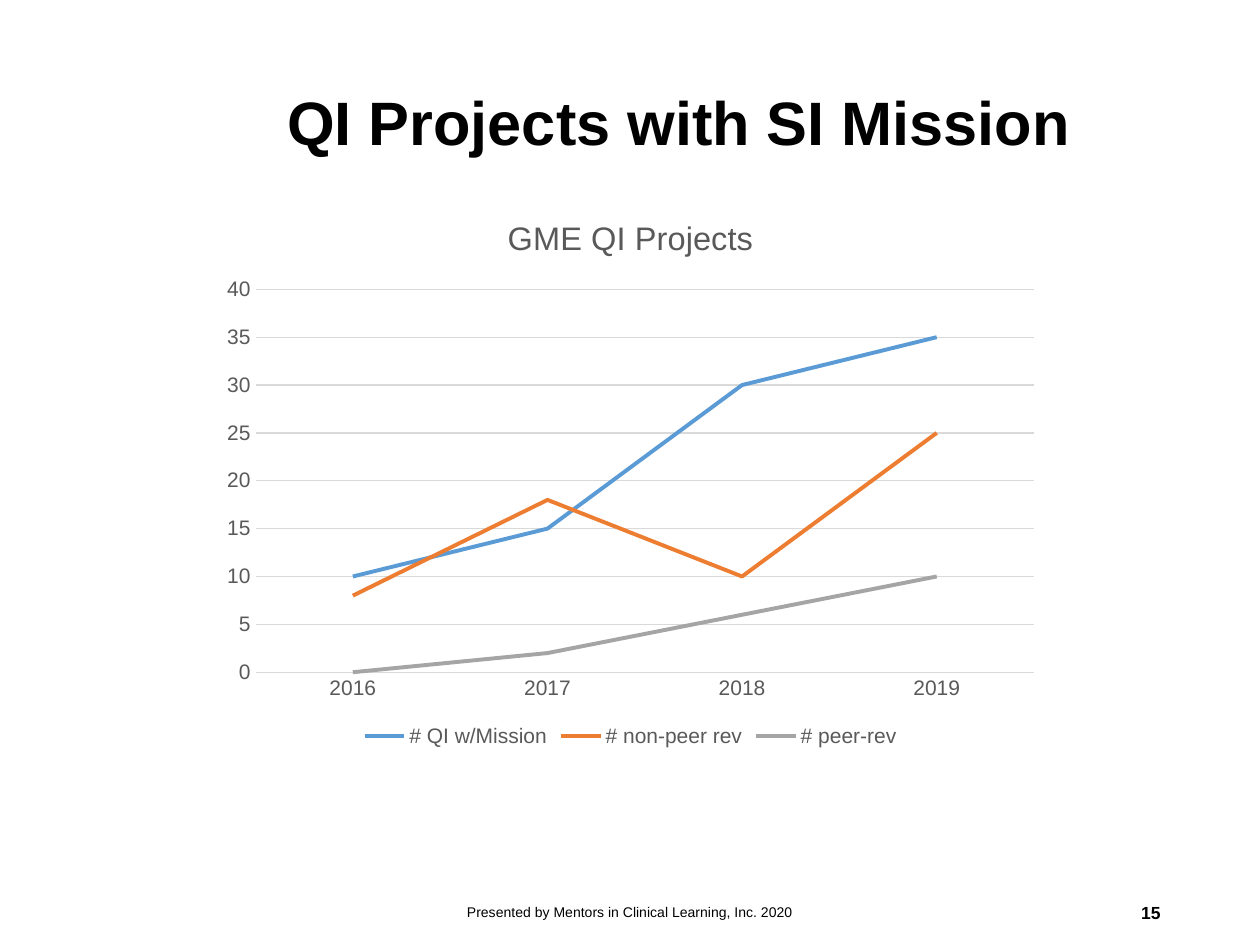
from pptx import Presentation
from pptx.chart.data import CategoryChartData
from pptx.dml.color import RGBColor
from pptx.enum.chart import XL_CHART_TYPE, XL_LEGEND_POSITION, XL_MARKER_STYLE, XL_TICK_MARK
from pptx.enum.text import MSO_ANCHOR, MSO_AUTO_SIZE, PP_ALIGN
from pptx.util import Inches, Pt

TITLE = "QI Projects with SI Mission"
CHART_TITLE = "GME QI Projects"
YEARS = ["2016", "2017", "2018", "2019"]
SERIES = [
    ("# QI w/Mission", [10, 15, 30, 35], "5B9BD5"),
    ("# non-peer rev", [8, 18, 10, 25], "ED7D31"),
    ("# peer-rev", [0, 2, 6, 10], "A5A5A5"),
]
FOOTERS = [  # text, left, width, size, bold, alignment
    ("Presented by Mentors in Clinical Learning, Inc. 2020", 3.31, 3.38, 8, False, PP_ALIGN.CENTER),
    ("15", 7.06, 2.25, 10, True, PP_ALIGN.RIGHT),
]
BLACK, GRAY, PALE = "000000", "595959", "D9D9D9"


def color(code):
    return RGBColor.from_string(code)


def style(font, size, code, bold=False):
    font.name, font.size, font.bold = "Arial", Pt(size), bold
    font.color.rgb = color(code)


def draw(line, code, width):
    line.color.rgb = color(code)
    line.width = Pt(width)


def place(shape, left, top, width, height):
    shape.left, shape.top = Inches(left), Inches(top)
    shape.width, shape.height = Inches(width), Inches(height)


def write(shape, text, size, bold, align, inset):
    frame = shape.text_frame
    frame.word_wrap = True
    frame.auto_size = MSO_AUTO_SIZE.NONE
    frame.vertical_anchor = MSO_ANCHOR.MIDDLE
    frame.margin_left = frame.margin_right = Inches(0.1)
    frame.margin_top = frame.margin_bottom = Inches(inset)
    frame.text = text
    para = frame.paragraphs[0]
    para.alignment = align
    style(para.font, size, BLACK, bold)
    return para


def add_chart(slide):
    data = CategoryChartData()
    data.categories = YEARS
    for name, values, _ in SERIES:
        data.add_series(name, values)
    box = [Inches(n) for n in (1.67, 1.53, 6.67, 4.44)]
    chart = slide.shapes.add_chart(XL_CHART_TYPE.LINE, *box, data).chart
    style(chart.font, 12, GRAY)

    chart.has_title = True
    chart.chart_title.include_in_layout = False
    frame = chart.chart_title.text_frame
    frame.text = CHART_TITLE
    style(frame.paragraphs[0].font, 18.6, GRAY)

    chart.has_legend = True
    chart.legend.position = XL_LEGEND_POSITION.BOTTOM
    chart.legend.include_in_layout = False
    style(chart.legend.font, 12, GRAY)

    for axis in (chart.category_axis, chart.value_axis):
        axis.major_tick_mark = axis.minor_tick_mark = XL_TICK_MARK.NONE
        style(axis.tick_labels.font, 12, GRAY)
    draw(chart.category_axis.format.line, PALE, 0.75)
    scale = chart.value_axis
    scale.minimum_scale, scale.maximum_scale, scale.major_unit = 0, 40, 5
    scale.format.line.fill.background()
    draw(scale.major_gridlines.format.line, PALE, 0.75)

    plot = chart.plots[0]
    plot.vary_by_categories = False
    for series, (_, _, code) in zip(plot.series, SERIES):
        series.smooth = False
        series.marker.style = XL_MARKER_STYLE.NONE
        draw(series.format.line, code, 2.25)


def main():
    deck = Presentation()
    deck.slide_width, deck.slide_height = Inches(10), Inches(7.5)
    slide = deck.slides.add_slide(deck.slide_layouts[5])
    title = slide.shapes.title
    place(title, 2.18, 0.27, 7.14, 1.45)
    write(title, TITLE, 35, True, PP_ALIGN.LEFT, 0.1).line_spacing = 0.9
    add_chart(slide)
    for text, left, width, size, bold, align in FOOTERS:
        box = slide.shapes.add_textbox(0, 0, 0, 0)
        place(box, left, 7.04, width, 0.4)
        write(box, text, size, bold, align, 0.05)
    deck.save("out.pptx")


if __name__ == "__main__":
    main()
